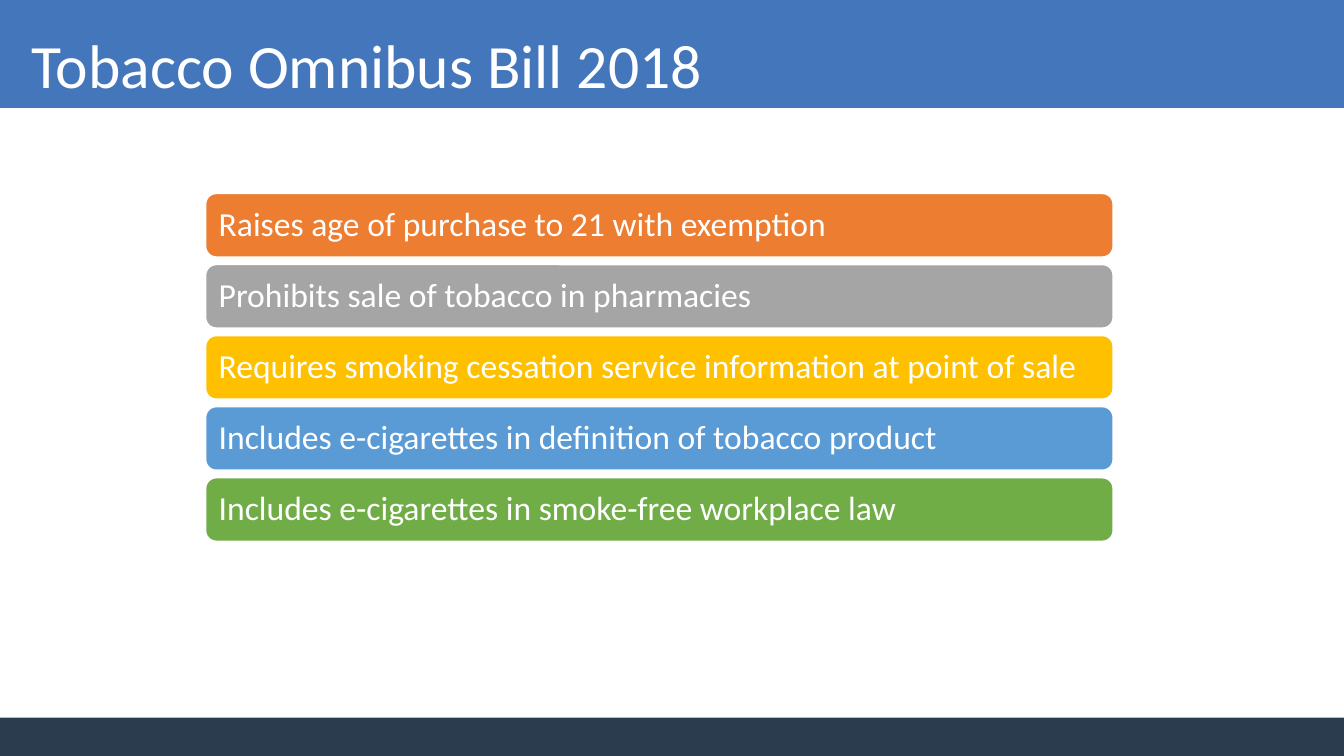
from pptx import Presentation
from pptx.dml.color import RGBColor
from pptx.enum.shapes import MSO_SHAPE
from pptx.enum.text import MSO_ANCHOR, PP_ALIGN
from pptx.util import Inches, Pt

RECT, ROUNDED = MSO_SHAPE.RECTANGLE, MSO_SHAPE.ROUNDED_RECTANGLE
TOP, MIDDLE = MSO_ANCHOR.TOP, MSO_ANCHOR.MIDDLE
LEFT = PP_ALIGN.LEFT

COLORS = {
    "header": "4376BB", "footer": "2A3C4E", "white": "FFFFFF",
    "orange": "ED7D31", "gray": "A5A5A5", "gold": "FFC000",
    "blue": "5B9BD5", "green": "70AD47",
}


def add_box(kind, x, y, w, h, color):
    sp = s.shapes.add_shape(kind, Inches(x), Inches(y), Inches(w), Inches(h))
    sp.shadow.inherit = False
    sp.fill.solid()
    sp.fill.fore_color.rgb = RGBColor.from_string(COLORS[color])
    sp.line.fill.background()
    return sp


def write(sp, text, size, anchor, inset_x, inset_y):
    tf = sp.text_frame
    frame = {"word_wrap": True, "vertical_anchor": anchor,
             "margin_left": Inches(inset_x), "margin_right": Inches(inset_x),
             "margin_top": Inches(inset_y), "margin_bottom": Inches(inset_y)}
    for name, value in frame.items():
        setattr(tf, name, value)
    p = tf.paragraphs[0]
    p.alignment = LEFT
    r = p.add_run()
    r.text = text
    for name, value in {"name": "Calibri", "size": Pt(size)}.items():
        setattr(r.font, name, value)
    r.font.color.rgb = RGBColor.from_string(COLORS["white"])
    return p


prs = Presentation()
prs.slide_width, prs.slide_height = Inches(13.33), Inches(7.5)
s = prs.slides.add_slide(prs.slide_layouts[5])

# Header and footer bands
add_box(RECT, 0, 0, 13.33, 1.07, "header")
add_box(RECT, 0, 7.12, 13.33, 0.38, "footer")

# Title, brought in front of the header band
title = s.shapes.title
s.shapes._spTree.append(title._element)
title.left, title.top = Inches(0.21), Inches(0.22)
title.width, title.height = Inches(7.4), Inches(0.85)
write(title, "Tobacco Omnibus Bill 2018", 44, TOP, 0.1, 0.05)

# Provisions of the bill, one bar each
provisions = [
    ("Raises age of purchase to 21 with exemption", "orange"),
    ("Prohibits sale of tobacco in pharmacies", "gray"),
    ("Requires smoking cessation service information at point of sale", "gold"),
    ("Includes e-cigarettes in definition of tobacco product", "blue"),
    ("Includes e-cigarettes in smoke-free workplace law", "green"),
]
bar_top, bar_step = 1.92, 0.705
for i, (text, color) in enumerate(provisions):
    bar = add_box(ROUNDED, 2.04, bar_top + i * bar_step, 9, 0.63, color)
    bar.line.color.rgb = RGBColor.from_string(COLORS["white"])
    bar.line.width = Pt(1)
    # The preset adds 0.03 inch inside its rounded corners
    p = write(bar, text, 24, MIDDLE, 0.1, 0.1)
    p.line_spacing = 0.9

prs.save("out.pptx")
